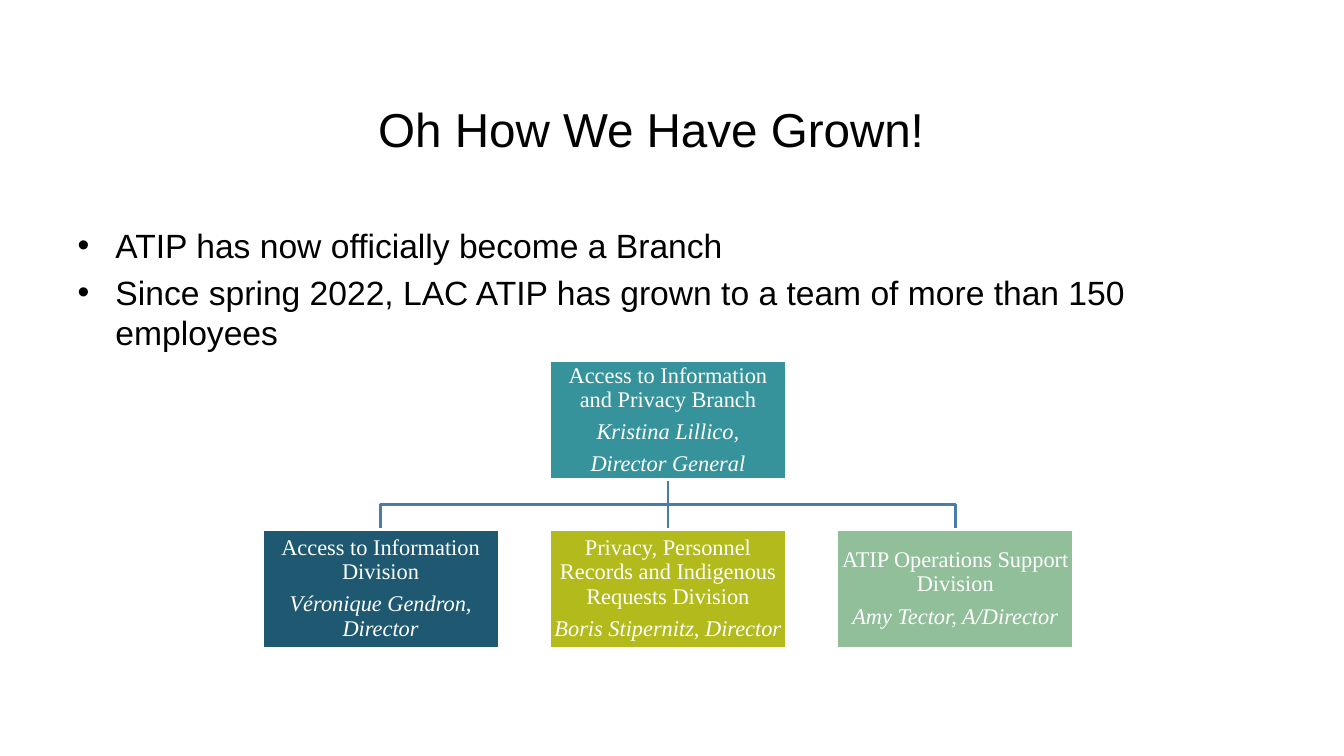
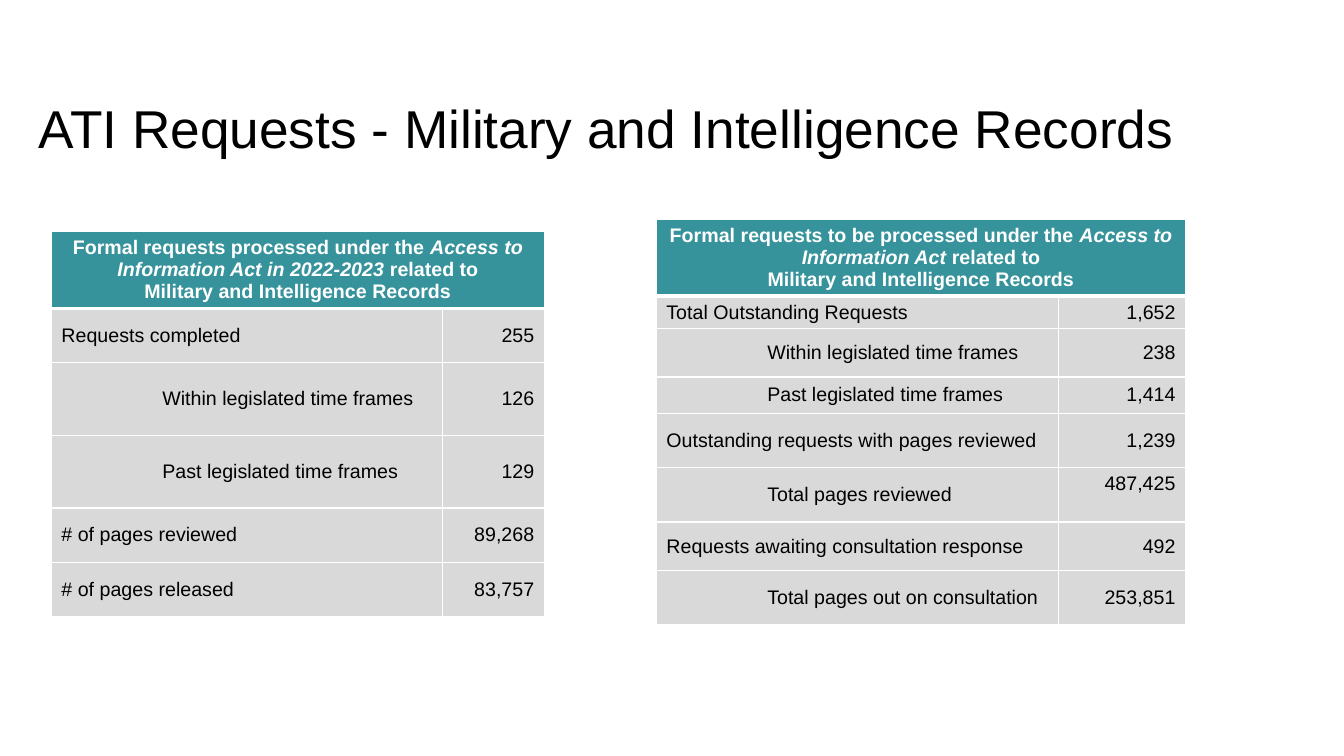
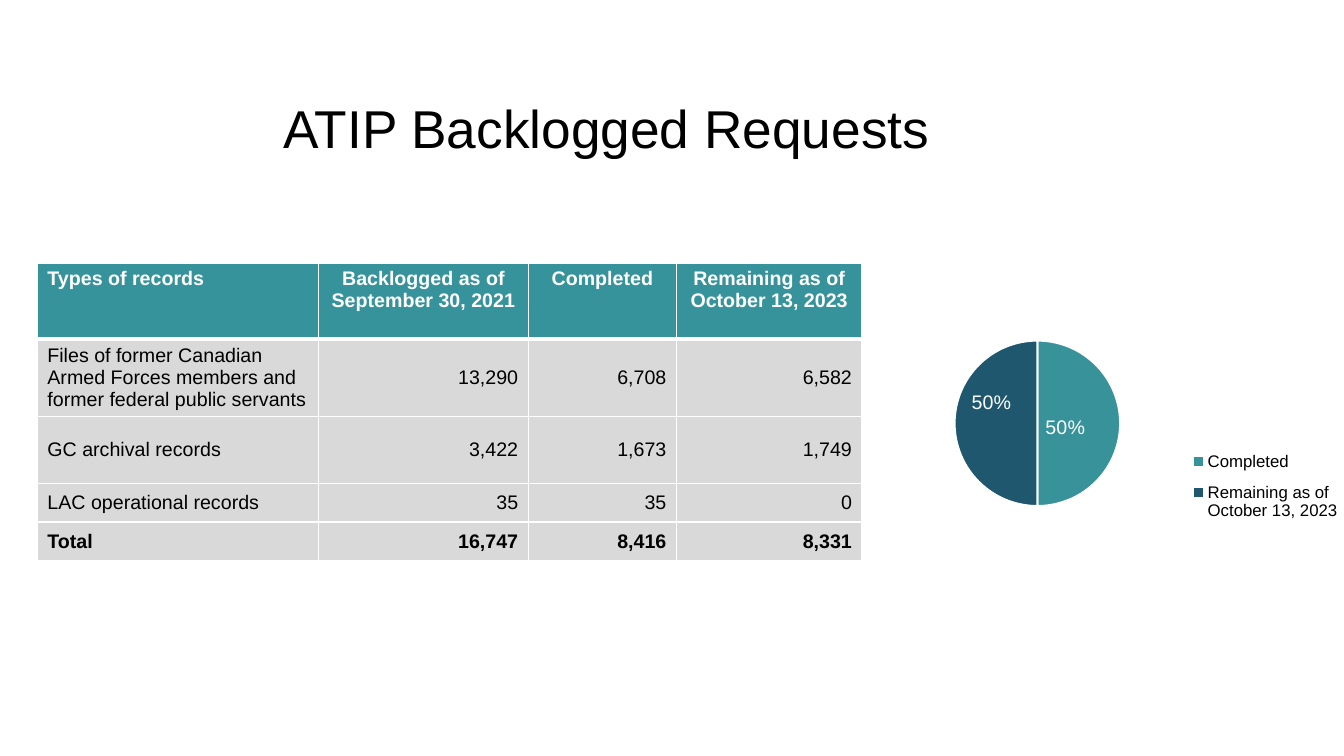
"""Build three slides on the growth, requests and backlog of an ATIP branch."""
from dataclasses import dataclass
from typing import NamedTuple

from lxml.etree import SubElement
from pptx import Presentation
from pptx.chart.data import CategoryChartData
from pptx.dml.color import RGBColor
from pptx.enum.chart import XL_CHART_TYPE, XL_LABEL_POSITION, XL_LEGEND_POSITION
from pptx.enum.shapes import MSO_CONNECTOR, MSO_SHAPE
from pptx.enum.text import MSO_ANCHOR, PP_ALIGN
from pptx.oxml import parse_xml
from pptx.oxml.ns import nsdecls, qn
from pptx.util import Emu, Inches, Pt

TEAL, NAVY, LIME, SAGE = "37939B", "1E5971", "B2BB1B", "90BF9A"
WHITE, BLACK, GREY, LINK = "FFFFFF", "000000", "D9D9D9", "497CAB"
SANS, SERIF = "Arial", "Times New Roman"
LEFT, CENTER, RIGHT = PP_ALIGN.LEFT, PP_ALIGN.CENTER, PP_ALIGN.RIGHT
TITLE_AREA = (2.6, 6.7, 115.1, 11.8)


class Span(NamedTuple):
    text: str
    italic: bool = False


@dataclass
class Unit:
    name: str
    people: list[str]
    column: int
    row: int
    color: str


@dataclass
class Grid:
    area: tuple[float, float]
    columns: list[float]
    rows: list[float]
    header: list[list[list[Span]]]
    body: list[list[str]]
    indented: tuple[int, ...] = ()
    raised: tuple[int, ...] = ()
    total: bool = False


def cells(count: float) -> Emu:
    """Turn a count of tenth-inch grid cells into a length."""
    return Inches(count / 10)


def color(value: str) -> RGBColor:
    """Turn a hex string into a colour."""
    return RGBColor.from_string(value)


def style(font, size: float, hue: str, face: str, bold: bool = False, italic: bool = False) -> None:
    """Format one font."""
    font.size, font.name, font.bold, font.italic = Pt(size), face, bold, italic
    font.color.rgb = color(hue)


def write(frame, paragraphs: list[list[Span]], size: float = 14, hue: str = BLACK,
          face: str = SANS, bold: bool = False, align=None, line: float | None = None,
          gap: float | None = None, indent: float = 0) -> None:
    """Write paragraphs of spans into a text frame."""
    for index, spans in enumerate(paragraphs):
        para = frame.add_paragraph() if index else frame.paragraphs[0]
        if indent:
            para._p.get_or_add_pPr().set("marL", str(cells(indent)))
        para.alignment = align
        if line:
            para.line_spacing = line
        if gap and index:
            para.space_before = Pt(gap)
        for span in spans:
            run = para.add_run()
            run.text = span.text
            style(run.font, size, hue, face, bold, span.italic)


def place(shape, area: tuple[float, float, float, float]) -> None:
    """Move a shape to an area of the grid."""
    shape.left, shape.top, shape.width, shape.height = map(cells, area)


def add_page(deck, layout: int, title: str, area=TITLE_AREA, size: float = 38):
    """Add a page with a formatted title."""
    page = deck.slides.add_slide(deck.slide_layouts[layout])
    place(page.shapes.title, area)
    page.shapes.title.text_frame.vertical_anchor = MSO_ANCHOR.MIDDLE
    write(page.shapes.title.text_frame, [[Span(title)]], size, align=CENTER)
    return page


def draw_line(shape) -> None:
    """Give a line of the organisation chart its look."""
    shape.line.color.rgb = color(LINK)
    shape.line.width = Pt(2)


def add_organisation(page, units: list[Unit]) -> None:
    """Draw the units as boxes joined by lines."""
    width, height, column_step, row_step = 23.5, 11.8, 28.5, 16.7
    left, top = 26, 35.8
    first, middle, last = (cells(left + width / 2 + column_step * column) for column in range(3))
    root, leaf = cells(top + height), cells(top + row_step)
    bus = (root + leaf) // 2

    builder = page.shapes.build_freeform(first, leaf)
    builder.add_line_segments([(first, bus), (last, bus), (last, leaf)], close=False)
    bracket = builder.convert_to_shape()
    bracket.fill.background()
    bracket.shadow.inherit = False
    draw_line(bracket)
    trunk = page.shapes.add_connector(MSO_CONNECTOR.STRAIGHT, middle, root, middle, leaf)
    draw_line(trunk)
    SubElement(trunk._element.spPr, qn("a:effectLst"))

    for unit in units:
        area = (left + unit.column * column_step, top + unit.row * row_step, width, height)
        box = page.shapes.add_shape(MSO_SHAPE.RECTANGLE, *map(cells, area))
        box.shadow.inherit = False
        box.fill.solid()
        box.fill.fore_color.rgb = color(unit.color)
        box.line.color.rgb = color(WHITE)
        box.line.width = Pt(2)
        frame = box.text_frame
        frame.word_wrap = True
        frame.vertical_anchor = MSO_ANCHOR.MIDDLE
        frame.margin_left = frame.margin_right = cells(0.1)
        frame.margin_top = frame.margin_bottom = cells(0.1)
        lines = [[Span(unit.name)]] + [[Span(person, True)] for person in unit.people]
        write(frame, lines, 16, WHITE, SERIF, align=CENTER, line=0.9, gap=5.6)


def paint(cell, fill: str, bottom: float = 1) -> None:
    """Give a cell its borders and fill."""
    properties = cell._tc.get_or_add_tcPr()
    for side, width in (("L", 1), ("R", 1), ("T", 1), ("B", bottom)):
        properties.append(parse_xml(
            f'<a:ln{side} {nsdecls("a")} w="{Pt(width)}"><a:solidFill>'
            f'<a:srgbClr val="{WHITE}"/></a:solidFill></a:ln{side}>'))
    cell.fill.solid()
    cell.fill.fore_color.rgb = color(fill)


def add_grid(page, grid: Grid) -> None:
    """Draw a table with a coloured header and grey rows."""
    table = page.shapes.add_table(
        len(grid.rows), len(grid.columns), *map(cells, grid.area),
        cells(sum(grid.columns)), cells(sum(grid.rows))).table
    table.horz_banding = False
    for column, width in zip(table.columns, grid.columns):
        column.width = cells(width)
    for row, height in zip(table.rows, grid.rows):
        row.height = cells(height)
    for cell in table.rows[0].cells:
        paint(cell, TEAL, 3)
    merged = len(grid.header) == 1
    if merged:
        table.cell(0, 0).merge(table.cell(0, len(grid.columns) - 1))
    for column, heading in enumerate(grid.header):
        align = CENTER if merged or column else LEFT
        write(table.cell(0, column).text_frame, heading, hue=WHITE, bold=True, align=align)
    for row, values in enumerate(grid.body, 1):
        for column, value in enumerate(values):
            cell = table.cell(row, column)
            paint(cell, GREY)
            raised = column and row in grid.raised
            cell.vertical_anchor = MSO_ANCHOR.TOP if raised else MSO_ANCHOR.MIDDLE
            write(cell.text_frame, [[Span(value)]],
                  bold=grid.total and row == len(grid.body),
                  align=RIGHT if column else LEFT,
                  indent=10 if not column and row in grid.indented else 0)


def act_header(start: str, act: str) -> list[list[list[Span]]]:
    """Compose a merged heading that names the act in italics."""
    return [[[Span(start), Span(act, True), Span("related to")],
             [Span("Military and Intelligence Records")]]]


def set_layout(parent, index: int, **shares: float) -> None:
    """Insert a manual layout, given as shares of the chart, into a chart element."""
    for old in parent.findall(qn("c:layout")):
        parent.remove(old)
    values = "".join(f'<c:{name} val="{share}"/>' for name, share in shares.items())
    parent.insert(index, parse_xml(
        f'<c:layout {nsdecls("c")}><c:manualLayout>{values}</c:manualLayout></c:layout>'))


def add_pie(page) -> None:
    """Draw the pie of completed and remaining requests."""
    data = CategoryChartData(number_format="0%")
    data.categories = ["Completed", "Remaining as of October 13, 2023"]
    data.add_series("Series 1", (0.5, 0.5))
    area = (88.9, 21.2, 44.4, 41.6)
    chart = page.shapes.add_chart(XL_CHART_TYPE.PIE, *map(cells, area), data).chart
    style(chart.font, 10, BLACK, SERIF)
    chart.has_title = False
    chart.has_legend = True
    chart.legend.position = XL_LEGEND_POSITION.RIGHT
    chart.legend.include_in_layout = False
    style(chart.legend.font, 12, BLACK, SANS)
    set_layout(chart.element.xpath(".//c:plotArea")[0], 0, layoutTarget="inner",
               xMode="edge", yMode="edge", x=0.13, y=0.3, w=0.37, h=0.4)
    set_layout(chart.element.xpath(".//c:legend")[0], 1,
               xMode="edge", yMode="edge", x=0.65, y=0.54, w=0.35, h=0.22)

    plot = chart.plots[0]
    plot.vary_by_categories = True
    plot.has_data_labels = True
    labels = plot.data_labels
    labels.show_value = True
    labels.show_percentage = False
    labels.number_format, labels.number_format_is_linked = "0%", False
    style(labels.font, 14, WHITE, SANS)
    for index, (hue, x, y) in enumerate((("37929A", -0.03, 0.01), ("1F576E", -0.01, -0.05))):
        point = plot.series[0].points[index]
        point.format.fill.solid()
        point.format.fill.fore_color.rgb = color(hue)
        point.format.line.color.rgb = color(WHITE)
        point.format.line.width = Pt(1.5)
        point.data_label.position = XL_LABEL_POSITION.CENTER
        style(point.data_label.font, 14, WHITE, SANS)
    for label, (x, y) in zip(chart.element.xpath(".//c:ser/c:dLbls/c:dLbl"),
                             ((-0.03, 0.01), (-0.01, -0.05))):
        set_layout(label, 1, x=x, y=y)


def build_growth(deck) -> None:
    """Build the page on the growth of the branch."""
    page = add_page(deck, 1, "Oh How We Have Grown!", (12.1, 6.8, 105, 11.8), 34)
    body = page.placeholders[1]
    place(body, (6.7, 21.8, 120, 42.5))
    write(body.text_frame, [
        [Span("ATIP has now officially become a Branch")],
        [Span("Since spring 2022, LAC ATIP has grown to a team of more than 150 employees")],
    ], 24)
    add_organisation(page, [
        Unit("Access to Information and Privacy Branch",
             ["Kristina Lillico,", "Director General"], 1, 0, TEAL),
        Unit("Access to Information Division", ["Véronique Gendron, Director"], 0, 1, NAVY),
        Unit("Privacy, Personnel Records and Indigenous Requests Division",
             ["Boris Stipernitz, Director"], 1, 1, LIME),
        Unit("ATIP Operations Support Division", ["Amy Tector, A/Director"], 2, 1, SAGE),
    ])


def build_requests(deck) -> None:
    """Build the page on military and intelligence requests."""
    page = add_page(deck, 5, "ATI Requests - Military and Intelligence Records")
    add_grid(page, Grid(
        (65.1, 21.8), [39.9, 12.6], [7.6, 3.2, 4.8, 3.6, 5.4, 5.4, 4.8, 5.4],
        act_header("Formal requests to be processed under the ", "Access to Information Act "),
        [["Total Outstanding Requests", "1,652"],
         ["Within legislated time frames", "238"],
         ["Past legislated time frames", "1,414"],
         ["Outstanding requests with pages reviewed", "1,239"],
         ["Total pages reviewed", "487,425"],
         ["Requests awaiting consultation response", "492"],
         ["Total pages out on consultation", "253,851"]],
        indented=(2, 3, 5, 7), raised=(5,)))
    add_grid(page, Grid(
        (5.1, 23), [38.8, 10.1], [7.6, 5.4, 7.2, 7.2, 5.4, 5.4],
        act_header("Formal requests processed under the ",
                   "Access to Information Act in 2022-2023 "),
        [["Requests completed", "255"],
         ["Within legislated time frames", "126"],
         ["Past legislated time frames", "129"],
         ["# of pages reviewed", "89,268"],
         ["# of pages released", "83,757"]],
        indented=(2, 3)))


def build_backlog(deck) -> None:
    """Build the page on backlogged requests."""
    page = add_page(deck, 5, "ATIP Backlogged Requests")
    headings = ["Types of records", "Backlogged as of September 30, 2021",
                "Completed", "Remaining as of October 13, 2023"]
    add_grid(page, Grid(
        (3.7, 26.1), [27.9, 20.8, 14.7, 18.4], [7.5, 7.7, 6.7, 3.8, 3.8],
        [[[Span(heading)]] for heading in headings],
        [["Files of former Canadian Armed Forces members and former federal public servants",
          "13,290", "6,708", "6,582"],
         ["GC archival records", "3,422", "1,673", "1,749"],
         ["LAC operational records", "35", "35", "0"],
         ["Total", "16,747", "8,416", "8,331"]],
        total=True))
    add_pie(page)


def main() -> None:
    """Build and save the deck."""
    deck = Presentation()
    deck.slide_width, deck.slide_height = Inches(13.33), Inches(7.5)
    build_growth(deck)
    build_requests(deck)
    build_backlog(deck)
    deck.save("out.pptx")


if __name__ == "__main__":
    main()
